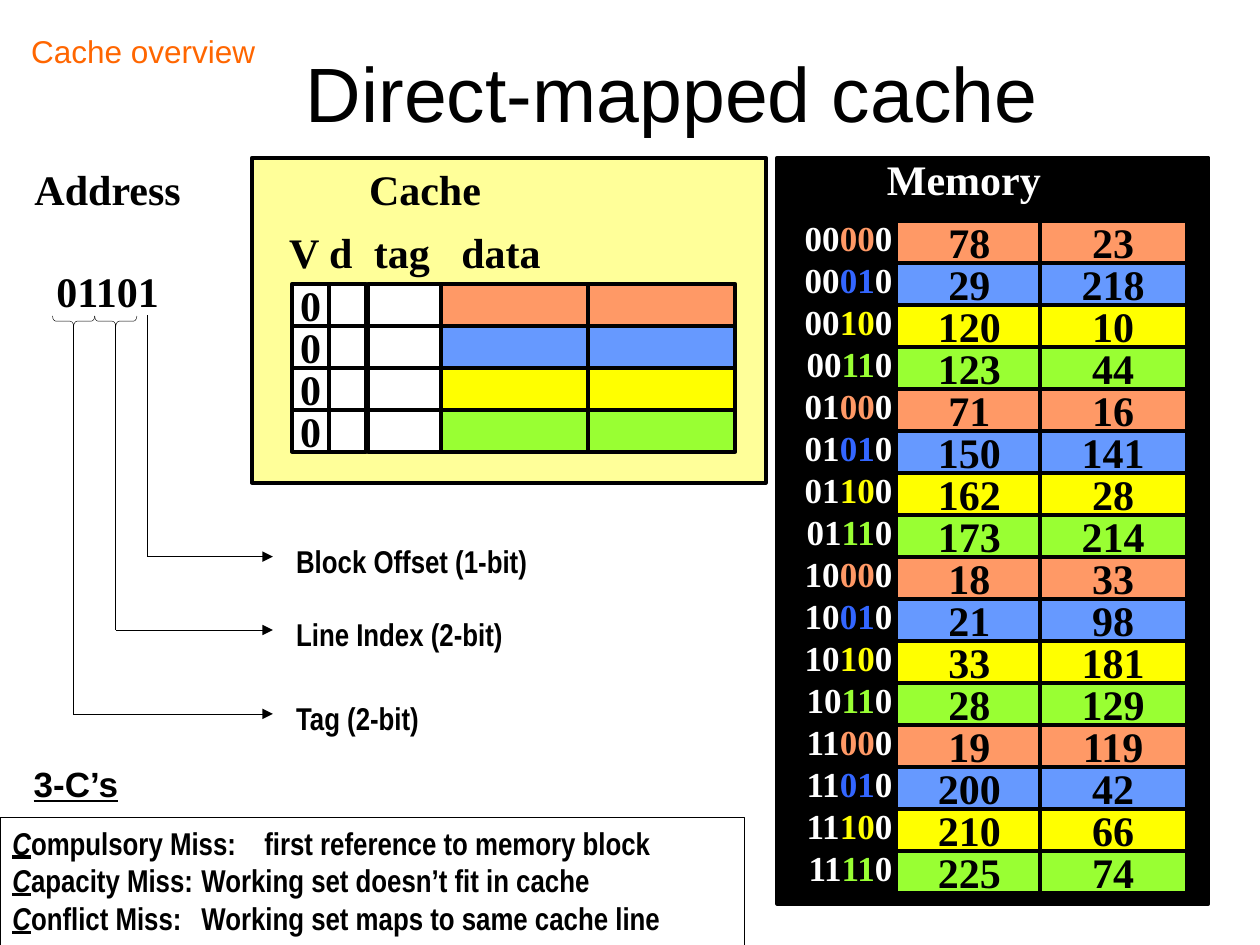
from lxml.etree import SubElement
from pptx import Presentation
from pptx.dml.color import RGBColor
from pptx.enum.shapes import MSO_CONNECTOR, MSO_SHAPE
from pptx.enum.text import MSO_ANCHOR as Anchor, MSO_AUTO_SIZE as AutoSize, PP_ALIGN as Align
from pptx.oxml.ns import qn
from pptx.util import Cm, Pt

BLACK = RGBColor(0x00, 0x00, 0x00)
WHITE = RGBColor(0xFF, 0xFF, 0xFF)
HEADING = RGBColor(0xFF, 0x66, 0x00)
CACHE_FILL = RGBColor(0xFF, 0xFF, 0x99)
ORANGE = RGBColor(0xFF, 0x99, 0x66)
BLUE = RGBColor(0x66, 0x99, 0xFF)
DEEP_BLUE = RGBColor(0x33, 0x66, 0xFF)
YELLOW = RGBColor(0xFF, 0xFF, 0x00)
GREEN = RGBColor(0x99, 0xFF, 0x33)

LINE_FILLS = [ORANGE, BLUE, YELLOW, GREEN]
INDEX_COLORS = [ORANGE, DEEP_BLUE, YELLOW, GREEN]

ROW_HEIGHT = 2.54 / 3
CACHE_TOP = 5.72
CACHE_COLUMNS = [(5.89, 0.75), (6.63, 0.75), (7.42, 1.48), (8.89, 2.96), (11.86, 2.96)]
MEMORY_TOP = 4.45
MEMORY_COLUMNS = [(18.06, 2.96), (20.96, 2.96)]
MEMORY = [
    (78, 23), (29, 218), (120, 10), (123, 44),
    (71, 16), (150, 141), (162, 28), (173, 214),
    (18, 33), (21, 98), (33, 181), (28, 129),
    (19, 119), (200, 42), (210, 66), (225, 74),
]

# label, label top, label width, line x, line top, arrow y
ADDRESS_FIELDS = [
    ("Block Offset (1-bit)", 10.8, 5.16, 2.96, 6.35, 11.22),
    ("Line Index (2-bit)", 12.28, 4.67, 2.33, 6.56, 12.7),
    ("Tag (2-bit)", 13.97, 3.18, 1.48, 6.56, 14.39),
]
MISSES = [
    ("ompulsory Miss: ", "first reference to memory block"),
    ("apacity Miss: ", "Working set doesn’t fit in cache"),
    ("onflict Miss: ", "Working set maps to same cache line"),
]


class SlideBuilder:
    serif, narrow, sans = "Times New Roman", "Arial Narrow", "Arial"
    thick, thin = Pt(2.25), Pt(0.25)

    def __init__(self, slide):
        self.slide = slide

    def style(self, item, size, font, color=BLACK, bold=True):
        """Set the font of a run or of a whole paragraph."""
        item.font.size = Pt(size)
        item.font.name = font
        item.font.bold = bold
        item.font.color.rgb = color

    def outline(self, line, width):
        line.color.rgb = BLACK
        line.width = width

    def box(self, left, top, width, height, fill=None, border=thick, kind=MSO_SHAPE.RECTANGLE):
        shape = self.slide.shapes.add_shape(kind, Cm(left), Cm(top), Cm(width), Cm(height))
        shape.shadow.inherit = False
        if fill is None:
            shape.fill.background()
        else:
            shape.fill.solid()
            shape.fill.fore_color.rgb = fill
        self.outline(shape.line, border)
        return shape

    def cell(self, left, top, width, fill, text=""):
        shape = self.box(left, top, width, ROW_HEIGHT, fill)
        if text:
            frame = shape.text_frame
            frame.text = text
            frame.word_wrap = False
            frame.vertical_anchor = Anchor.MIDDLE
            frame.paragraphs[0].alignment = Align.CENTER
            self.style(frame.paragraphs[0].runs[0], 24, self.serif)

    def text(self, left, top, width, height, text, size, font,
             color=BLACK, bold=True, align=Align.LEFT, wrap=False):
        shape = self.slide.shapes.add_textbox(Cm(left), Cm(top), Cm(width), Cm(height))
        frame = shape.text_frame
        frame.text = text
        frame.word_wrap = wrap
        frame.auto_size = AutoSize.SHAPE_TO_FIT_TEXT
        for paragraph in frame.paragraphs:
            paragraph.alignment = align
            for run in paragraph.runs:
                self.style(run, size, font, color, bold)
        return frame

    def line(self, start, end, arrow=False):
        (x1, y1), (x2, y2) = start, end
        connector = self.slide.shapes.add_connector(
            MSO_CONNECTOR.STRAIGHT, Cm(x1), Cm(y1), Cm(x2), Cm(y2))
        self.outline(connector.line, self.thin)
        properties = connector._element.spPr
        if arrow:
            SubElement(properties.find(qn("a:ln")), qn("a:tailEnd"), type="triangle")
        SubElement(properties, qn("a:effectLst"))

    def brace(self, left, top):
        shape = self.box(left, top, 0.21, 0.85, border=self.thin, kind=MSO_SHAPE.LEFT_BRACE)
        shape.rotation = 270
        shape.adjustments[0] = 0.33

    def tab_stops(self, paragraph, positions):
        stops = SubElement(paragraph._p.get_or_add_pPr(), qn("a:tabLst"))
        for position in positions:
            SubElement(stops, qn("a:tab"), pos=str(Cm(position)), algn="l")


def draw_headings(builder):
    title = builder.text(2.97, 1.07, 21.16, 1.55, "Direct-mapped cache", 44, builder.sans,
                         bold=False, align=Align.CENTER, wrap=True)
    title.auto_size = AutoSize.NONE
    title.vertical_anchor = Anchor.MIDDLE
    builder.text(0.38, 0.53, 5.03, 1.02, "Cache overview", 18, builder.sans, HEADING, bold=False)


def draw_cache(builder):
    builder.box(5.08, 3.18, 10.36, 6.55, CACHE_FILL)
    builder.text(7.19, 3.18, 2.77, 1.27, "Cache", 24, builder.serif)
    header = builder.text(5.28, 4.45, 6.12, 1.27, "V d\ttag\tdata", 24, builder.serif, wrap=True)
    header.margin_left = Cm(0.55)
    builder.tab_stops(header.paragraphs[0], [1.71, 3.47])
    for row, fill in enumerate(LINE_FILLS):
        for column, (left, width) in enumerate(CACHE_COLUMNS):
            builder.cell(left, CACHE_TOP + row * ROW_HEIGHT, width,
                         fill if column > 2 else WHITE, "0" if column == 0 else "")


def draw_memory(builder):
    builder.box(15.67, 3.18, 8.69, 15.04, BLACK)
    builder.text(17.63, 2.97, 3.61, 1.27, "Memory", 24, builder.serif, WHITE)
    addresses = builder.text(15.95, 4.24, 2.29, 13.79, "\n" * (len(MEMORY) - 1), 20,
                             builder.serif, align=Align.RIGHT)
    for row, (values, paragraph) in enumerate(zip(MEMORY, addresses.paragraphs)):
        tag, index = divmod(row, len(LINE_FILLS))
        paragraph.line_spacing = Pt(24)
        parts = [(f"{tag:02b}", WHITE), (f"{index:02b}", INDEX_COLORS[index]), ("0", WHITE)]
        for part, color in parts:
            run = paragraph.add_run()
            run.text = part
            builder.style(run, 20, builder.serif, color)
        for value, (left, width) in zip(values, MEMORY_COLUMNS):
            builder.cell(left, MEMORY_TOP + row * ROW_HEIGHT, width, LINE_FILLS[index], str(value))


def draw_address(builder):
    address = builder.text(0.43, 3.18, 3.48, 3.3, "Address\n01101", 24, builder.serif,
                           align=Align.CENTER)
    address.paragraphs[1].space_before = Pt(29)
    for left in (1.38, 2.23):
        builder.brace(left, 6.05)
    for label, label_top, width, x, top, y in ADDRESS_FIELDS:
        builder.line((x, top), (x, y))
        builder.line((x, y), (5.5, y), arrow=True)
        builder.text(5.72, label_top, width, 1.02, label, 18, builder.narrow)


def draw_misses(builder):
    builder.text(0.43, 15.24, 2.24, 1.09, "3-C’s", 20, builder.sans).paragraphs[0].runs[0].font.underline = True
    frame = builder.box(0, 16.48, 15.01, 2.57, border=builder.thin).text_frame
    frame.word_wrap = False
    frame.vertical_anchor = Anchor.TOP
    frame.text = "\n".join("C" for _ in MISSES)
    for paragraph, (name, meaning) in zip(frame.paragraphs, MISSES):
        paragraph.alignment = Align.LEFT
        initial, rest = paragraph.runs[0], paragraph.add_run()
        rest.text = f"{name}\t{meaning}"
        for run in (initial, rest):
            builder.style(run, 18, builder.narrow)
        initial.font.italic = initial.font.underline = True


def main():
    presentation = Presentation()
    presentation.slide_width, presentation.slide_height = Cm(25.4), Cm(19.05)
    builder = SlideBuilder(presentation.slides.add_slide(presentation.slide_layouts[6]))
    for draw in (draw_headings, draw_cache, draw_memory, draw_address, draw_misses):
        draw(builder)
    presentation.save("out.pptx")


if __name__ == "__main__":
    main()
